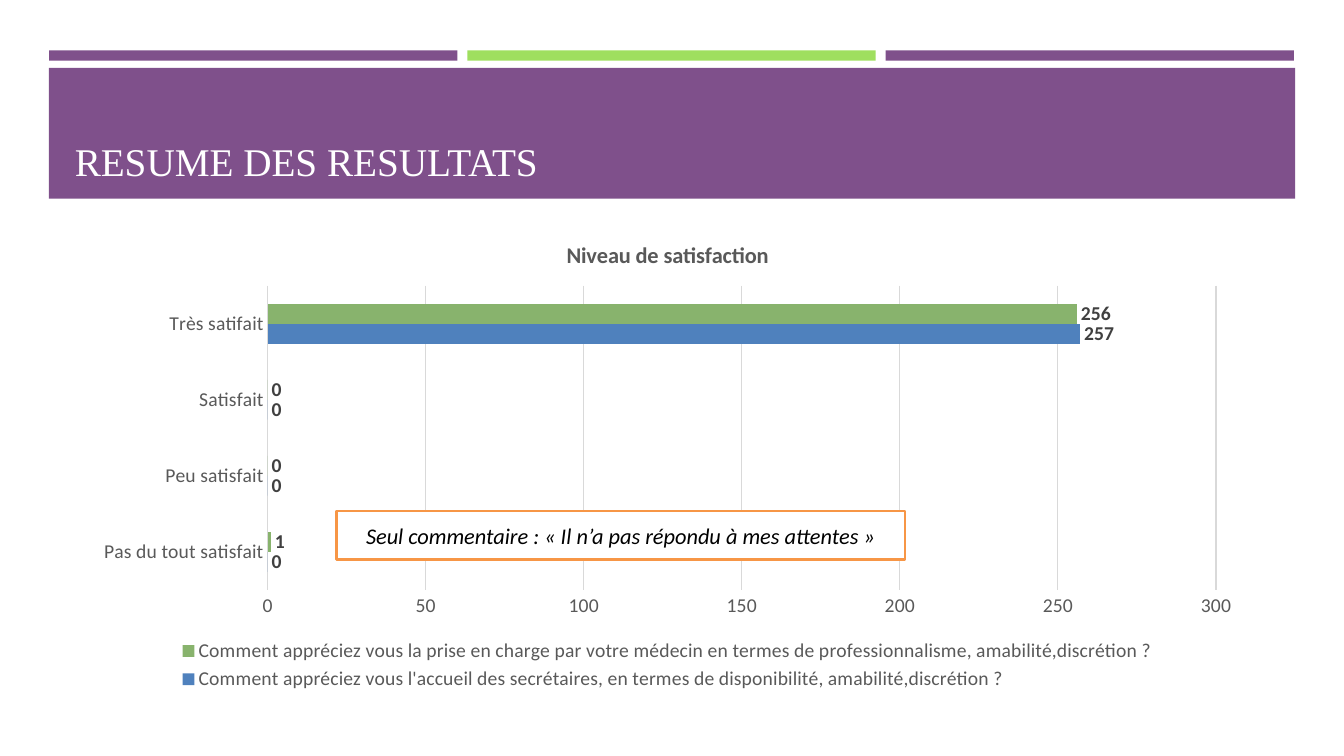
from pptx import Presentation
from pptx.chart.data import CategoryChartData
from pptx.dml.color import RGBColor
from pptx.enum.chart import XL_CHART_TYPE, XL_LABEL_POSITION, XL_LEGEND_POSITION, XL_TICK_MARK
from pptx.enum.shapes import MSO_SHAPE
from pptx.enum.text import MSO_ANCHOR, PP_ALIGN
from pptx.util import Cm, Pt

PURPLE, GREEN, WHITE = "7F508B", "9FDF5F", "FFFFFF"
GREY, GRID, ORANGE = "595959", "D9D9D9", "F79646"

TITLE_FONT = {"name": "Times New Roman", "size": Pt(28), "bold": False}
CHART_FONT = {"name": "Calibri", "size": Pt(14), "bold": False}
CHART_TITLE_FONT = {"name": "Calibri", "size": Pt(16), "bold": True}
LABEL_FONT = {"name": "Calibri", "size": Pt(14), "bold": True}
COMMENT_FONT = {"name": "Calibri", "size": Pt(16), "italic": True}

CATEGORIES = ["Pas du tout satisfait", "Peu satisfait", "Satisfait", "Très satifait"]
SERIES = [
    ("Comment appréciez vous l'accueil des secrétaires, en termes de "
     "disponibilité, amabilité,discrétion ?", (0, 0, 0, 257), "4F81BD"),
    ("Comment appréciez vous la prise en charge par votre médecin en termes de "
     "professionnalisme, amabilité,discrétion ?", (1, 0, 0, 256), "88B36D"),
]


def color(value):
    return RGBColor.from_string(value)


def format_font(font, values, font_color):
    for name, value in values.items():
        setattr(font, name, value)
    font.color.rgb = color(font_color)


def format_line(line, line_color, width):
    line.color.rgb = color(line_color)
    line.width = Pt(width)


def add_rectangle(slide, left, top, width, height, fill):
    shape = slide.shapes.add_shape(
        MSO_SHAPE.RECTANGLE, Cm(left), Cm(top), Cm(width), Cm(height))
    shape.shadow.inherit = False
    shape.fill.solid()
    shape.fill.fore_color.rgb = color(fill)
    shape.line.fill.background()
    return shape


def add_header(slide):
    for index, fill in enumerate((PURPLE, GREEN, PURPLE)):
        add_rectangle(slide, 1.24 + index * 10.54, 1.27, 10.29, 0.26, fill)
    add_rectangle(slide, 1.23, 1.71, 31.41, 3.3, PURPLE)


def set_title(slide, text):
    """Fill the title placeholder and bring it in front of the header band."""
    title = slide.shapes.title
    slide.shapes._spTree.append(title._element)
    title.left, title.top, title.width, title.height = Cm(1.63), Cm(1.96), Cm(30.63), Cm(2.82)
    frame = title.text_frame
    frame.text = text
    frame.vertical_anchor = MSO_ANCHOR.BOTTOM
    paragraph = frame.paragraphs[0]
    paragraph.alignment = PP_ALIGN.LEFT
    format_font(paragraph.runs[0].font, TITLE_FONT, WHITE)


def format_axes(chart):
    for axis in (chart.category_axis, chart.value_axis):
        axis.major_tick_mark = axis.minor_tick_mark = XL_TICK_MARK.NONE
        format_font(axis.tick_labels.font, CHART_FONT, GREY)
    format_line(chart.category_axis.format.line, GRID, 0.75)
    value_axis = chart.value_axis
    value_axis.minimum_scale, value_axis.maximum_scale = 0, 300
    value_axis.major_unit = 50
    value_axis.format.line.fill.background()
    format_line(value_axis.major_gridlines.format.line, GRID, 0.75)


def format_series(series, fill):
    series.format.fill.solid()
    series.format.fill.fore_color.rgb = color(fill)
    labels = series.data_labels
    labels.show_value = True
    labels.position = XL_LABEL_POSITION.OUTSIDE_END
    format_font(labels.font, LABEL_FONT, "404040")


def add_satisfaction_chart(slide):
    data = CategoryChartData()
    data.categories = CATEGORIES
    for name, values, _ in SERIES:
        data.add_series(name, values)
    chart = slide.shapes.add_chart(
        XL_CHART_TYPE.BAR_CLUSTERED, Cm(2.03), Cm(5.56), Cm(29.59), Cm(11.96), data).chart
    format_font(chart.font, CHART_FONT, "000000")

    chart.has_title = True
    title_frame = chart.chart_title.text_frame
    title_frame.text = "Niveau de satisfaction"
    format_font(title_frame.paragraphs[0].runs[0].font, CHART_TITLE_FONT, GREY)
    chart.chart_title.include_in_layout = False

    chart.has_legend = True
    chart.legend.position = XL_LEGEND_POSITION.BOTTOM
    chart.legend.include_in_layout = False
    format_font(chart.legend.font, CHART_FONT, GREY)

    format_axes(chart)
    plot = chart.plots[0]
    plot.vary_by_categories = False
    plot.gap_width = 182
    for series, (_, _, fill) in zip(plot.series, SERIES):
        format_series(series, fill)


def add_comment(slide, text):
    box = add_rectangle(slide, 8.48, 12.88, 14.33, 1.22, WHITE)
    format_line(box.line, ORANGE, 1.75)
    frame = box.text_frame
    frame.word_wrap = True
    frame.vertical_anchor = MSO_ANCHOR.MIDDLE
    frame.text = text
    paragraph = frame.paragraphs[0]
    paragraph.alignment = PP_ALIGN.CENTER
    format_font(paragraph.runs[0].font, COMMENT_FONT, "000000")


def main():
    presentation = Presentation()
    presentation.slide_width, presentation.slide_height = Cm(33.87), Cm(19.05)
    slide = presentation.slides.add_slide(presentation.slide_layouts[5])
    add_header(slide)
    set_title(slide, "RESUME DES RESULTATS")
    add_satisfaction_chart(slide)
    add_comment(slide, "Seul commentaire : « Il n’a pas répondu à mes attentes »")
    presentation.save("out.pptx")


if __name__ == "__main__":
    main()
